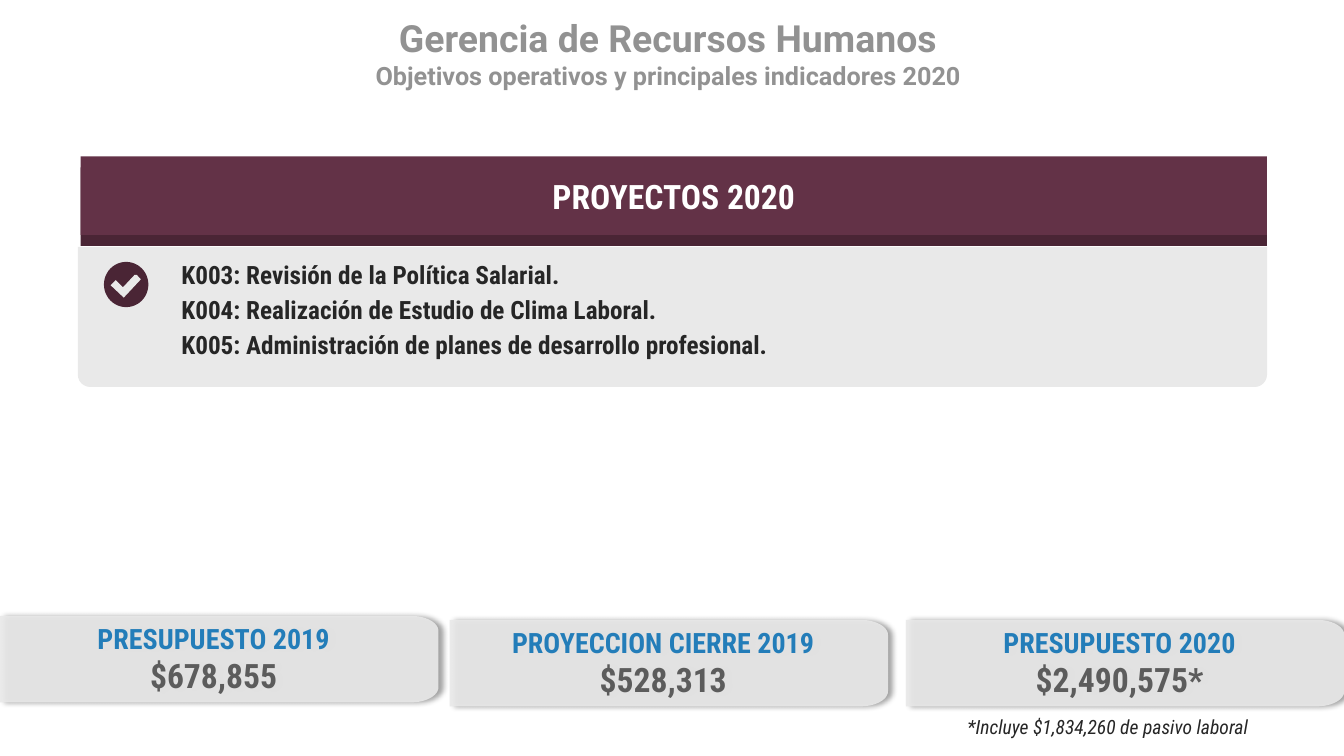
"""Builds the Human Resources slide with its 2020 projects and budget figures."""
from math import cos, pi, sin

from lxml import etree
from pptx import Presentation
from pptx.dml.color import RGBColor
from pptx.enum.shapes import MSO_SHAPE
from pptx.enum.text import MSO_ANCHOR, MSO_AUTO_SIZE, PP_ALIGN
from pptx.oxml.ns import qn
from pptx.util import Cm, Pt

RECTANGLE = MSO_SHAPE.RECTANGLE
ROUNDED_TOP = MSO_SHAPE.ROUND_2_SAME_RECTANGLE
OVAL = MSO_SHAPE.OVAL
TOP, MIDDLE = MSO_ANCHOR.TOP, MSO_ANCHOR.MIDDLE
LEFT, CENTER = PP_ALIGN.LEFT, PP_ALIGN.CENTER
NO_AUTOFIT = MSO_AUTO_SIZE.NONE

HEADING = [("Gerencia de Recursos Humanos", 26.7),
           ("Objetivos operativos y principales indicadores 2020", 18)]
BAND_TITLE = "PROYECTOS 2020"
PROJECTS = ["K003: Revisión de la Política Salarial.",
            "K004: Realización de Estudio de Clima Laboral.",
            "K005: Administración de planes de desarrollo profesional."]
BUDGETS = [("PRESUPUESTO 2019", "$678,855", 0, 15.52),
           ("PROYECCION CIERRE 2019", "$528,313", 11.33, 15.62),
           ("PRESUPUESTO 2020", "$2,490,575*", 22.83, 15.62)]
FOOTNOTE = "*Incluye $1,834,260 de pasivo laboral"

CONDENSED = "Roboto Condensed"
PLUM, DARK_PLUM, PALE = "633247", "4A2535", "E9E9E9"
BLUE, GRAY, INK = "237DB9", "5C5C5C", "262626"
CARD_WIDTH, CARD_HEIGHT = 11.05, 2.18
CORNER_X, CORNER_Y, CORNER_STEPS = 0.69, 0.38, 12
CHECK = [(3.45, 6.93), (3.55, 7.04), (3.12, 7.5), (2.79, 7.19),
         (2.92, 7.06), (3.1, 7.24), (3.39, 6.93)]


def color(hex_text):
    return RGBColor.from_string(hex_text)


def set_font(font, size, hex_text, name=CONDENSED, bold=True, italic=False):
    font.size, font.name, font.bold, font.italic = Pt(size), name, bold, italic
    font.color.rgb = color(hex_text)


def style(paragraph, *look, align=LEFT, **options):
    paragraph.alignment = align
    for font in [paragraph.font] + [run.font for run in paragraph.runs]:
        set_font(font, *look, **options)


def place(shape, left, top, width, height):
    shape.left, shape.top = Cm(left), Cm(top)
    shape.width, shape.height = Cm(width), Cm(height)


def frame_of(shape, margins=(0, 0, 0, 0), anchor=TOP):
    frame = shape.text_frame
    frame.word_wrap, frame.auto_size = True, NO_AUTOFIT
    frame.vertical_anchor = anchor
    (frame.margin_left, frame.margin_top,
     frame.margin_right, frame.margin_bottom) = map(Cm, margins)
    return frame


def paint(shape, hex_text):
    shape.shadow.inherit = False
    shape.fill.solid()
    shape.fill.fore_color.rgb = color(hex_text)
    shape.line.fill.background()
    return shape


def add_box(slide, kind, hex_text, *box):
    return paint(slide.shapes.add_shape(kind, *map(Cm, box)), hex_text)


def add_outline(slide, points, hex_text):
    corners = [(Cm(x), Cm(y)) for x, y in points]
    builder = slide.shapes.build_freeform(*corners[0])
    builder.add_line_segments(corners[1:], close=True)
    return paint(builder.convert_to_shape(), hex_text)


def soften(card):
    properties = card._element.spPr
    fill = properties.find(qn("a:solidFill")).find(qn("a:srgbClr"))
    etree.SubElement(fill, qn("a:alpha"), val="90000")
    shadow = etree.SubElement(properties.find(qn("a:effectLst")), qn("a:outerShdw"),
                              blurRad=str(Pt(4)), dist=str(Pt(3)), dir="0",
                              algn="l", rotWithShape="0")
    black = etree.SubElement(shadow, qn("a:srgbClr"), val="000000")
    etree.SubElement(black, qn("a:alpha"), val="40000")


def card_points(left, top):
    right, bottom = left + CARD_WIDTH, top + CARD_HEIGHT
    angles = [pi / 2 * step / CORNER_STEPS for step in range(CORNER_STEPS + 1)]
    upper = [(right - CORNER_X * (1 - sin(a)), top + CORNER_Y * (1 - cos(a)))
             for a in angles]
    lower = [(x, top + bottom - y) for x, y in reversed(upper)]
    return [(left, top)] + upper + lower + [(left, bottom)]


def add_heading(slide):
    title = slide.shapes.title
    place(title, 6.4, 0.25, 20.88, 2.46)
    frame = frame_of(title, (0.25, 0.13, 0.25, 0.13))
    frame.text = "\n".join(text for text, _ in HEADING)
    for paragraph, (_, size) in zip(frame.paragraphs, HEADING):
        style(paragraph, size, "929292", name="Roboto", align=CENTER)


def add_projects(slide):
    panel = add_box(slide, ROUNDED_TOP, PALE, 1.96, 6.22, 29.97, 3.53)
    panel.adjustments[0] = 0.088
    panel.rotation = 180
    add_box(slide, RECTANGLE, DARK_PLUM, 2.03, 4.22, 29.9, 1.98)
    band = add_box(slide, RECTANGLE, PLUM, 2.03, 3.94, 29.9, 1.98)
    frame = frame_of(band, anchor=MIDDLE)
    frame.text = BAND_TITLE
    style(frame.paragraphs[0], 24, "FFFFFF", align=CENTER)
    add_box(slide, OVAL, DARK_PLUM, 2.62, 6.6, 1.12, 1.14)
    add_outline(slide, CHECK, PALE)

    body = slide.placeholders[1]
    place(body, 4.57, 6.53, 28.57, 2.62)
    frame = frame_of(body)
    frame.text = "\n".join(PROJECTS)
    for paragraph in frame.paragraphs:
        paragraph.space_before = Pt(3.6)
        properties = paragraph._p.get_or_add_pPr()
        properties.set("marL", "0")
        properties.set("indent", "0")
        etree.SubElement(properties, qn("a:buNone"))
        style(paragraph, 18, INK)
    slide.shapes._spTree.append(body._element)


def add_budget(slide, label, amount, left, top):
    card = add_outline(slide, card_points(left, top), PALE)
    soften(card)
    paragraph = frame_of(card, (0.36, 0.13, 0.64, 0)).paragraphs[0]
    paragraph.alignment = CENTER
    label_run = paragraph.add_run()
    label_run.text = label
    set_font(label_run.font, 20, BLUE)
    paragraph.add_line_break()
    amount_run = paragraph.add_run()
    amount_run.text = amount
    set_font(amount_run.font, 24, GRAY)


def add_footnote(slide):
    note = slide.shapes.add_textbox(Cm(24.13), Cm(17.88), Cm(8.99), Cm(0.86))
    frame = frame_of(note, (0.25, 0.13, 0.25, 0.13))
    frame.text = FOOTNOTE
    style(frame.paragraphs[0], 14, INK, bold=False, italic=True)


def main():
    deck = Presentation()
    deck.slide_width, deck.slide_height = Cm(33.87), Cm(19.05)
    slide = deck.slides.add_slide(deck.slide_layouts[1])
    add_heading(slide)
    add_projects(slide)
    for budget in BUDGETS:
        add_budget(slide, *budget)
    add_footnote(slide)
    deck.save("out.pptx")


if __name__ == "__main__":
    main()
